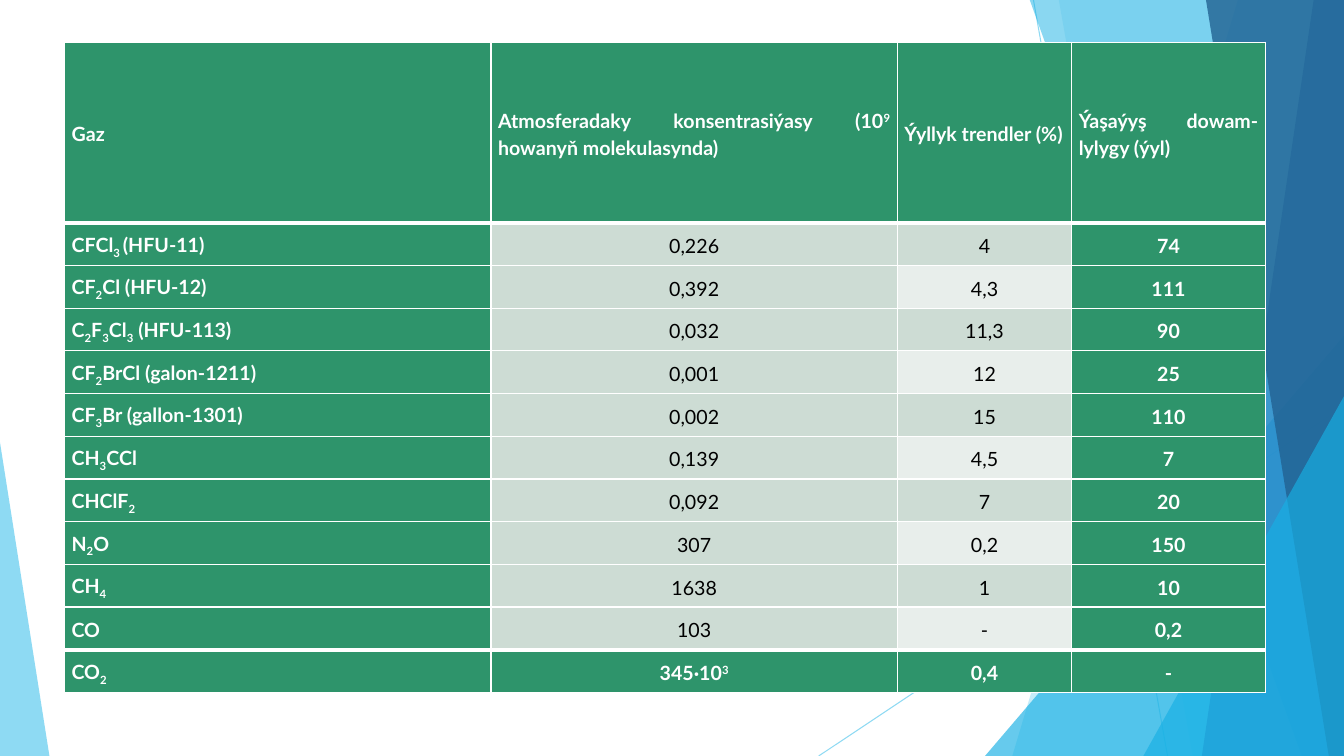
from lxml import etree
from pptx import Presentation
from pptx.dml.color import RGBColor
from pptx.enum.shapes import MSO_CONNECTOR, MSO_SHAPE
from pptx.enum.text import MSO_ANCHOR, PP_ALIGN
from pptx.oxml.ns import qn
from pptx.util import Inches, Pt

STRAIGHT = MSO_CONNECTOR.STRAIGHT
TRIANGLE = MSO_SHAPE.ISOSCELES_TRIANGLE
MIDDLE = MSO_ANCHOR.MIDDLE
CENTER, JUSTIFY = PP_ALIGN.CENTER, PP_ALIGN.JUSTIFY

WIDTH, HEIGHT = 13.33, 7.5
GREEN, BAND_DARK, BAND_LIGHT = "2E946B", "CDDCD4", "E8EEEB"
WHITE, BLACK = "FFFFFF", "000000"
SKY, CYAN, BLUE, NAVY = "5FCBEF", "17B0E4", "2E83C3", "226292"

# x1, y1, x2, y2
RAYS = [(10.25, 0, 11.58, HEIGHT), (WIDTH, 4.03, 8.12, HEIGHT)]
# Facets run to the right edge: top x, bottom x, colour, opacity
BACK_FACETS = [(12.28, 10.04, SKY, 36), (10.5, 11.83, SKY, 20)]
FRONT_FACETS = [
    (10.21, 12.91, CYAN, 50),
    (13.03, 11.92, BLUE, 70),
    (11.96, 13.18, NAVY, 80),
]

# Text between a pair of _ is subscript, between a pair of ^ superscript
ROWS = [
    ("Gaz", "Atmosferadaky konsentrasiýasy (10^9^ howanyň molekulasynda)",
     "Ýyllyk trendler (%)", "Ýaşaýyş dowam-lylygy (ýyl)"),
    ("CFCl_3 _(HFU-11)", "0,226", "4", "74"),
    ("CF_2_Cl (HFU-12)", "0,392", "4,3", "111"),
    ("C_2_F_3_Cl_3_ (HFU-113)", "0,032", "11,3", "90"),
    ("CF_2_BrCl (galon-1211)", "0,001", "12", "25"),
    ("CF_3_Br (gallon-1301)", "0,002", "15", "110"),
    ("CH_3_CCl", "0,139", "4,5", "7"),
    ("CHClF_2_", "0,092", "7", "20"),
    ("N_2_O", "307", "0,2", "150"),
    ("CH_4_", "1638", "1", "10"),
    ("CO", "103", "-", "0,2"),
    ("CO_2_", "345·10^3^", "0,4", "-"),
]
COL_WIDTHS = [4.23, 4.03, 1.73, 1.92]
HEADER_HEIGHT = 1.79


def rgb(color):
    return RGBColor.from_string(color)


def set_opacity(sp, percent):
    for clr in sp._element.spPr.iter(qn("a:srgbClr")):
        etree.SubElement(clr, qn("a:alpha"), val=str(percent * 1000))


def paint(sp, color, opacity):
    sp.shadow.inherit = False
    sp.fill.solid()
    sp.fill.fore_color.rgb = rgb(color)
    sp.line.fill.background()
    set_opacity(sp, opacity)


def add_ray(s, ends):
    line = s.shapes.add_connector(STRAIGHT, *map(Inches, ends))
    line.line.color.rgb = rgb(SKY)
    line.line.width = Pt(0.75)
    set_opacity(line, 70)
    etree.SubElement(line._element.spPr, qn("a:effectLst"))


def add_facet(s, top_x, bottom_x, color, opacity):
    top = -0.01
    corners = [(WIDTH, top), (WIDTH, HEIGHT), (bottom_x, HEIGHT)]
    builder = s.shapes.build_freeform(Inches(top_x), Inches(top))
    builder.add_line_segments([tuple(map(Inches, c)) for c in corners])
    paint(builder.convert_to_shape(), color, opacity)


def add_triangle(s, box, apex, color, opacity):
    sp = s.shapes.add_shape(TRIANGLE, *map(Inches, box))
    sp.adjustments[0] = apex
    paint(sp, color, opacity)


def add_backdrop(s):
    for ends in RAYS:
        add_ray(s, ends)
    for facet in BACK_FACETS:
        add_facet(s, *facet)
    add_triangle(s, (9.77, 3.33, 3.56, 4.17), 1, CYAN, 66)
    for facet in FRONT_FACETS:
        add_facet(s, *facet)
    add_triangle(s, (11.34, 3.93, 1.99, 3.57), 1, CYAN, 66)
    add_triangle(s, (0, 4.39, 0.49, 3.11), 0, SKY, 70)


def set_borders(cell, top, bottom):
    tcPr = cell._tc.get_or_add_tcPr()
    for side, points in (("L", 1), ("R", 1), ("T", top), ("B", bottom)):
        ln = etree.SubElement(tcPr, qn(f"a:ln{side}"), w=str(Pt(points)))
        fill = etree.SubElement(ln, qn("a:solidFill"))
        etree.SubElement(fill, qn("a:srgbClr"), val=WHITE)


def write_text(cell, text, align, color, bold):
    p = cell.text_frame.paragraphs[0]
    p.alignment, p.line_spacing = align, 1.15
    mark, shift = ("^", "30000") if "^" in text else ("_", "-25000")
    for i, part in enumerate(text.split(mark)):
        if not part:
            continue
        r = p.add_run()
        r.text = part
        for name, value in {"name": "Lato", "size": Pt(14), "bold": bold}.items():
            setattr(r.font, name, value)
        r.font.color.rgb = rgb(color)
        if i % 2:
            r.font._element.set("baseline", shift)


def add_gas_table(s, left, top, width, height):
    last_row, last_col = len(ROWS) - 1, len(COL_WIDTHS) - 1
    table = s.shapes.add_table(len(ROWS), len(COL_WIDTHS),
                               *map(Inches, (left, top, width, height))).table
    table.first_row = table.horz_banding = False
    for column, col_width in zip(table.columns, COL_WIDTHS):
        column.width = Inches(col_width)
    for i, row in enumerate(table.rows):
        row.height = Inches((height - HEADER_HEIGHT) / last_row if i else HEADER_HEIGHT)
        for j, cell in enumerate(row.cells):
            strong = i in (0, last_row) or j in (0, last_col)
            band = BAND_LIGHT if j == 2 and i % 2 == 0 else BAND_DARK
            set_borders(cell, top=3 if i in (1, last_row) else 1,
                        bottom=3 if i in (0, last_row - 1) else 1)
            cell.fill.solid()
            cell.fill.fore_color.rgb = rgb(GREEN if strong else band)
            cell.vertical_anchor = MIDDLE
            cell.margin_left = cell.margin_right = Inches(0.07)
            cell.margin_top = cell.margin_bottom = 0
            write_text(cell, ROWS[i][j], JUSTIFY if i == 0 or j == 0 else CENTER,
                       WHITE if strong else BLACK, strong)


def main():
    prs = Presentation()
    prs.slide_width, prs.slide_height = Inches(WIDTH), Inches(HEIGHT)
    s = prs.slides.add_slide(prs.slide_layouts[6])
    add_backdrop(s)
    add_gas_table(s, 0.64, 0.42, sum(COL_WIDTHS), 6.45)
    prs.save("out.pptx")


if __name__ == "__main__":
    main()
